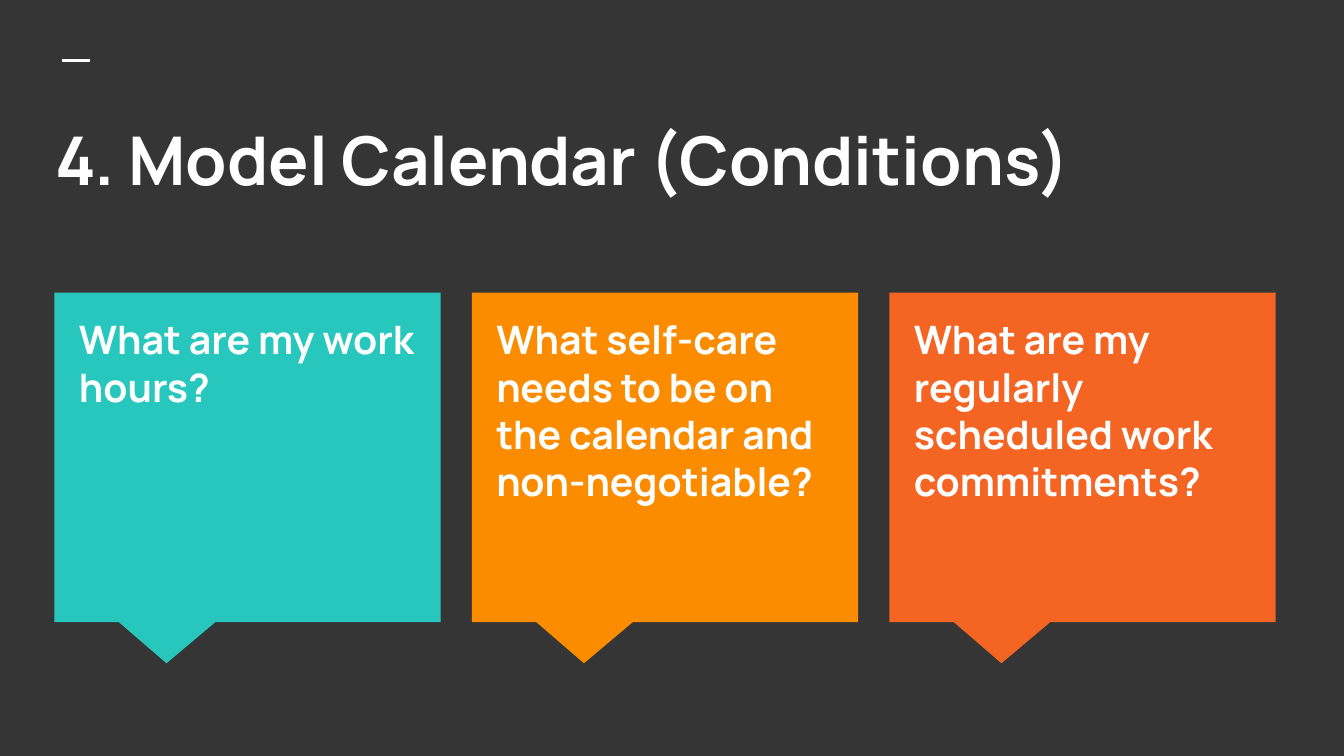
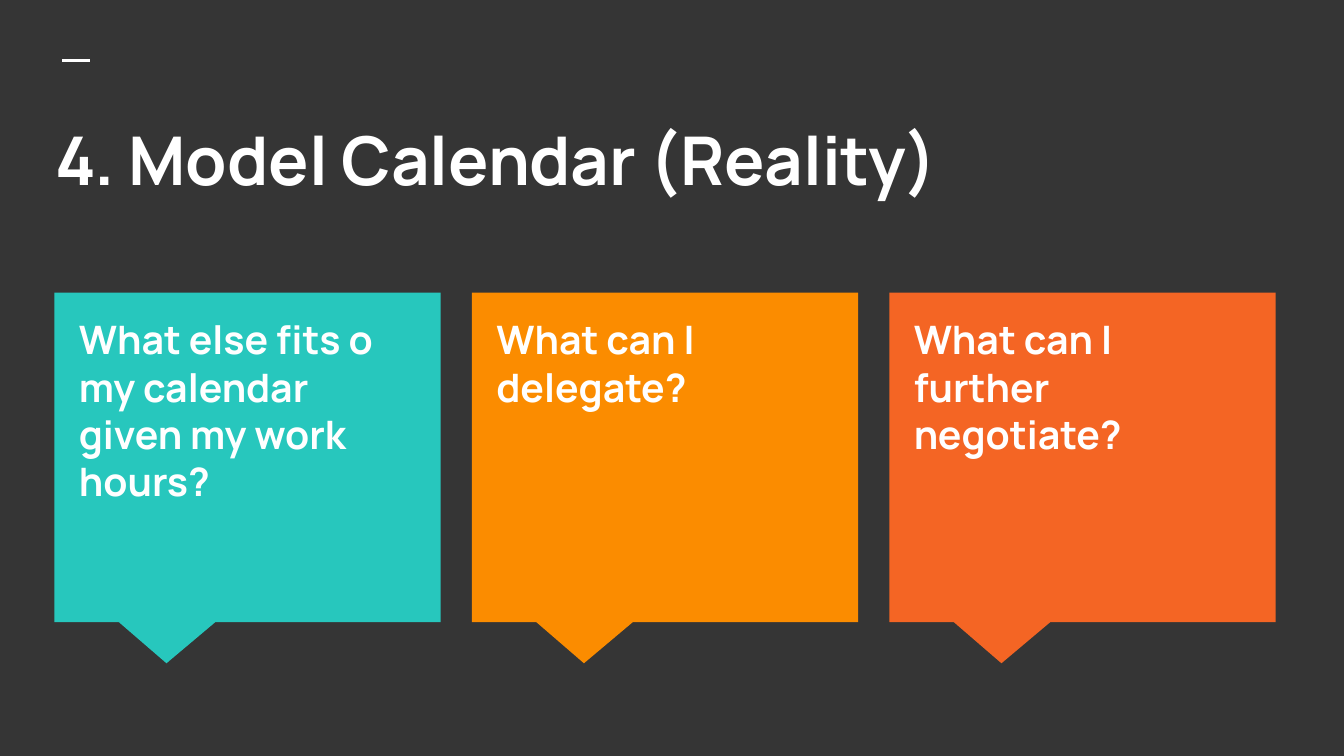
"""Build the two model calendar slides, each with three question callouts."""

from dataclasses import dataclass

from lxml.etree import SubElement
from pptx import Presentation
from pptx.dml.color import RGBColor
from pptx.enum.shapes import MSO_CONNECTOR, MSO_SHAPE
from pptx.enum.text import MSO_ANCHOR, MSO_AUTO_SIZE, PP_ALIGN
from pptx.oxml.ns import qn
from pptx.shapes.base import BaseShape
from pptx.slide import Slide
from pptx.text.text import TextFrame
from pptx.util import Cm, Pt


@dataclass(frozen=True)
class Theme:
    background: RGBColor = RGBColor.from_string("353535")
    text: RGBColor = RGBColor.from_string("FFFFFF")
    callouts: tuple[RGBColor, ...] = (
        RGBColor.from_string("27C7BD"),
        RGBColor.from_string("FB8C00"),
        RGBColor.from_string("F46524"),
    )
    font: str = "Manrope"
    title_size: Pt = Pt(36)
    question_size: Pt = Pt(21)
    dash_width: Pt = Pt(1.5)


@dataclass(frozen=True)
class Box:
    left: float
    top: float
    width: float
    height: float

    def shifted(self, distance: float) -> "Box":
        return Box(self.left + distance, self.top, self.width, self.height)

    def lengths(self) -> tuple[Cm, Cm, Cm, Cm]:
        return Cm(self.left), Cm(self.top), Cm(self.width), Cm(self.height)


@dataclass(frozen=True)
class CalendarPage:
    title: str
    questions: tuple[str, ...]


THEME = Theme()
TITLE_BOX = Box(0.79, 1.98, 23.95, 2.84)
CALLOUT_BOX = Box(1.03, 5.53, 7.3, 6.23)
QUESTION_BOX = Box(1.24, 5.72, 6.88, 5.56)
CALLOUT_STEP = 7.89
CALLOUT_TIP = (-0.21, 0.625)

PAGES = (
    CalendarPage(
        "4. Model Calendar (Conditions)",
        (
            "What are my work hours?",
            "What self-care needs to be on the calendar and non-negotiable?",
            "What are my regularly scheduled work commitments?",
        ),
    ),
    CalendarPage(
        "4. Model Calendar (Reality)",
        (
            "What else fits o my calendar given my work hours?",
            "What can I delegate?",
            "What can I further negotiate?",
        ),
    ),
)


def place(shape: BaseShape, box: Box) -> None:
    shape.left, shape.top, shape.width, shape.height = box.lengths()


def write(frame: TextFrame, text: str, size: Pt, space_after: Pt) -> None:
    frame.word_wrap = True
    frame.auto_size = MSO_AUTO_SIZE.NONE
    frame.vertical_anchor = MSO_ANCHOR.TOP
    frame.margin_left = frame.margin_right = Cm(0.25)
    frame.margin_top = frame.margin_bottom = Cm(0.25)
    para = frame.paragraphs[0]
    para.alignment = PP_ALIGN.LEFT
    para.space_after = space_after
    span = para.add_run()
    span.text = text
    span.font.name = THEME.font
    span.font.size = size
    span.font.bold = True
    span.font.color.rgb = THEME.text


def add_dash(page: Slide) -> None:
    dash = page.shapes.add_connector(
        MSO_CONNECTOR.STRAIGHT, Cm(1.18), Cm(1.14), Cm(1.7), Cm(1.14)
    )
    dash.line.color.rgb = THEME.text
    dash.line.width = THEME.dash_width
    SubElement(dash.element.spPr, qn("a:effectLst"))


def add_callout(page: Slide, box: Box, color: RGBColor) -> None:
    callout = page.shapes.add_shape(
        MSO_SHAPE.RECTANGULAR_CALLOUT, *box.lengths()
    )
    callout.adjustments[0], callout.adjustments[1] = CALLOUT_TIP
    callout.shadow.inherit = False
    callout.fill.solid()
    callout.fill.fore_color.rgb = color
    callout.line.fill.background()


def add_question(page: Slide, box: Box, text: str) -> None:
    question = page.shapes.add_textbox(*box.lengths())
    write(question.text_frame, text, THEME.question_size, Pt(12))


def add_page(deck: Presentation, content: CalendarPage) -> None:
    page = deck.slides.add_slide(deck.slide_layouts.get_by_name("Title Only"))
    add_dash(page)
    place(page.shapes.title, TITLE_BOX)
    write(page.shapes.title.text_frame, content.title, THEME.title_size, Pt(0))
    for index, (text, color) in enumerate(zip(content.questions, THEME.callouts)):
        distance = index * CALLOUT_STEP
        add_callout(page, CALLOUT_BOX.shifted(distance), color)
        add_question(page, QUESTION_BOX.shifted(distance), text)


def main() -> None:
    deck = Presentation()
    deck.slide_width, deck.slide_height = Cm(25.4), Cm(14.29)
    backdrop = deck.slide_master.background.fill
    backdrop.solid()
    backdrop.fore_color.rgb = THEME.background
    for content in PAGES:
        add_page(deck, content)
    deck.save("out.pptx")


if __name__ == "__main__":
    main()
